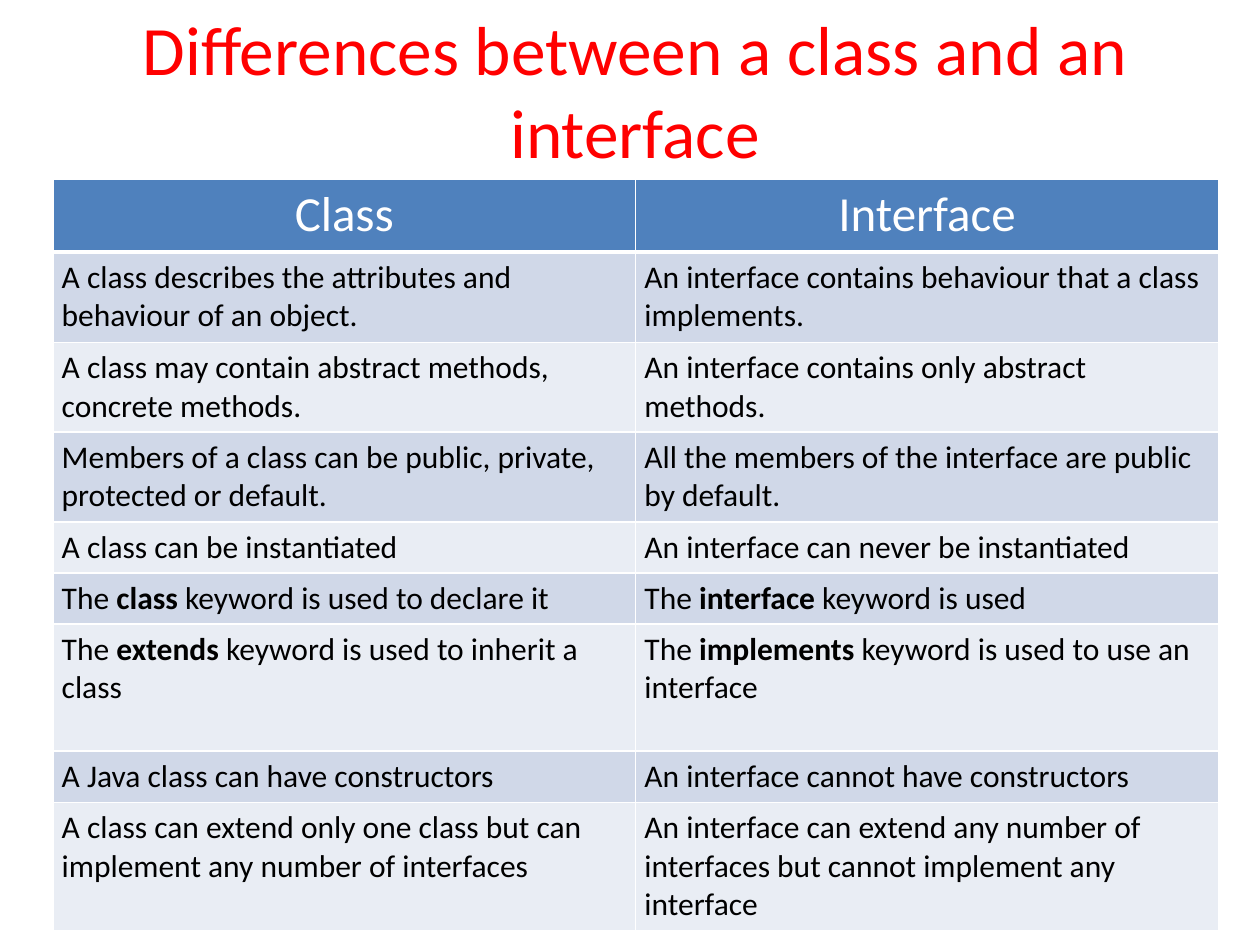
from pptx import Presentation
from pptx.dml.color import RGBColor
from pptx.enum.text import MSO_ANCHOR, PP_ALIGN
from pptx.oxml.ns import qn
from pptx.util import Inches, Pt
from lxml import etree

CENTER = PP_ALIGN.CENTER
LEFT = PP_ALIGN.LEFT
MIDDLE = MSO_ANCHOR.MIDDLE
TITLE_ONLY = 5

FONT = "Calibri"
WHITE, BLACK, RED = "FFFFFF", "000000", "FF0000"
HEADER_FILL = "4F81BD"
BAND_FILLS = ("D0D8E8", "E9EDF4")

TITLE = "Differences between a class and an interface"
HEADERS = ("Class", "Interface")
# Height, class text, interface text; ** encloses bold words
COMPARISONS = [
    (0.72, "A class describes the attributes and behaviour of an object.",
     "An interface contains behaviour that a class implements."),
    (0.71, "A class may contain abstract methods, concrete methods.",
     "An interface contains only abstract methods."),
    (0.71, "Members of a class can be public, private, protected or default.",
     "All the members of the interface are public by default."),
    (0.4, "A class can be instantiated",
     "An interface can never be instantiated"),
    (0.4, "The **class** keyword is used to declare it",
     "The **interface** keyword is used"),
    (1.01, "The **extends** keyword is used to inherit a class",
     "The **implements** keyword is used to use an interface"),
    (0.4, "A Java class can have constructors",
     "An interface cannot have constructors"),
    (1.01, "A class can extend only one class but can implement any number of interfaces",
     "An interface can extend any number of interfaces but cannot implement any interface"),
]


def color(hex_string):
    return RGBColor.from_string(hex_string)


def format_paragraph(paragraph, size, hex_string, alignment):
    paragraph.alignment = alignment
    paragraph.font.name = FONT
    paragraph.font.size = Pt(size)
    paragraph.font.color.rgb = color(hex_string)


def add_borders(cell, bottom_width):
    properties = cell._tc.get_or_add_tcPr()
    for tag, width in (("a:lnL", 1), ("a:lnR", 1), ("a:lnT", 1), ("a:lnB", bottom_width)):
        line = etree.SubElement(properties, qn(tag), w=str(Pt(width)))
        fill = etree.SubElement(line, qn("a:solidFill"))
        etree.SubElement(fill, qn("a:srgbClr"), val=WHITE)


def fill_cell(cell, text, fill, size, hex_string, alignment, bottom_width=1):
    add_borders(cell, bottom_width)
    cell.fill.solid()
    cell.fill.fore_color.rgb = color(fill)
    cell.margin_left = cell.margin_right = Inches(0.07)
    cell.margin_top = cell.margin_bottom = Inches(0.05)
    paragraph = cell.text_frame.paragraphs[0]
    format_paragraph(paragraph, size, hex_string, alignment)
    for index, part in enumerate(text.split("**")):
        run = paragraph.add_run()
        run.text = part
        run.font.bold = index % 2 == 1


def place_title(slide, left, top, width, height):
    title = slide.shapes.title
    title.left, title.top = Inches(left), Inches(top)
    title.width, title.height = Inches(width), Inches(height)
    frame = title.text_frame
    frame.text = TITLE
    frame.word_wrap = True
    frame.vertical_anchor = MIDDLE
    format_paragraph(frame.paragraphs[0], 39.6, RED, CENTER)


def add_comparison_table(slide, left, top, width):
    heights = [0.58] + [row[0] for row in COMPARISONS]
    table = slide.shapes.add_table(
        len(heights), len(HEADERS), Inches(left), Inches(top),
        Inches(width), Inches(sum(heights))).table
    for row, height in zip(table.rows, heights):
        row.height = Inches(height)

    # Header row
    for column, text in enumerate(HEADERS):
        fill_cell(table.cell(0, column), text, HEADER_FILL, 28, WHITE, CENTER, 3)

    # Banded body rows
    for index, (_, *texts) in enumerate(COMPARISONS):
        for column, text in enumerate(texts):
            fill_cell(table.cell(index + 1, column), text,
                      BAND_FILLS[index % 2], 18, BLACK, LEFT)


def main():
    presentation = Presentation()
    presentation.slide_width = Inches(10)
    presentation.slide_height = Inches(7.5)
    slide = presentation.slides.add_slide(presentation.slide_layouts[TITLE_ONLY])
    place_title(slide, 0.08, 0.25, 9.92, 0.92)
    add_comparison_table(slide, 0.42, 1.42, 9.25)
    presentation.save("out.pptx")


if __name__ == "__main__":
    main()
